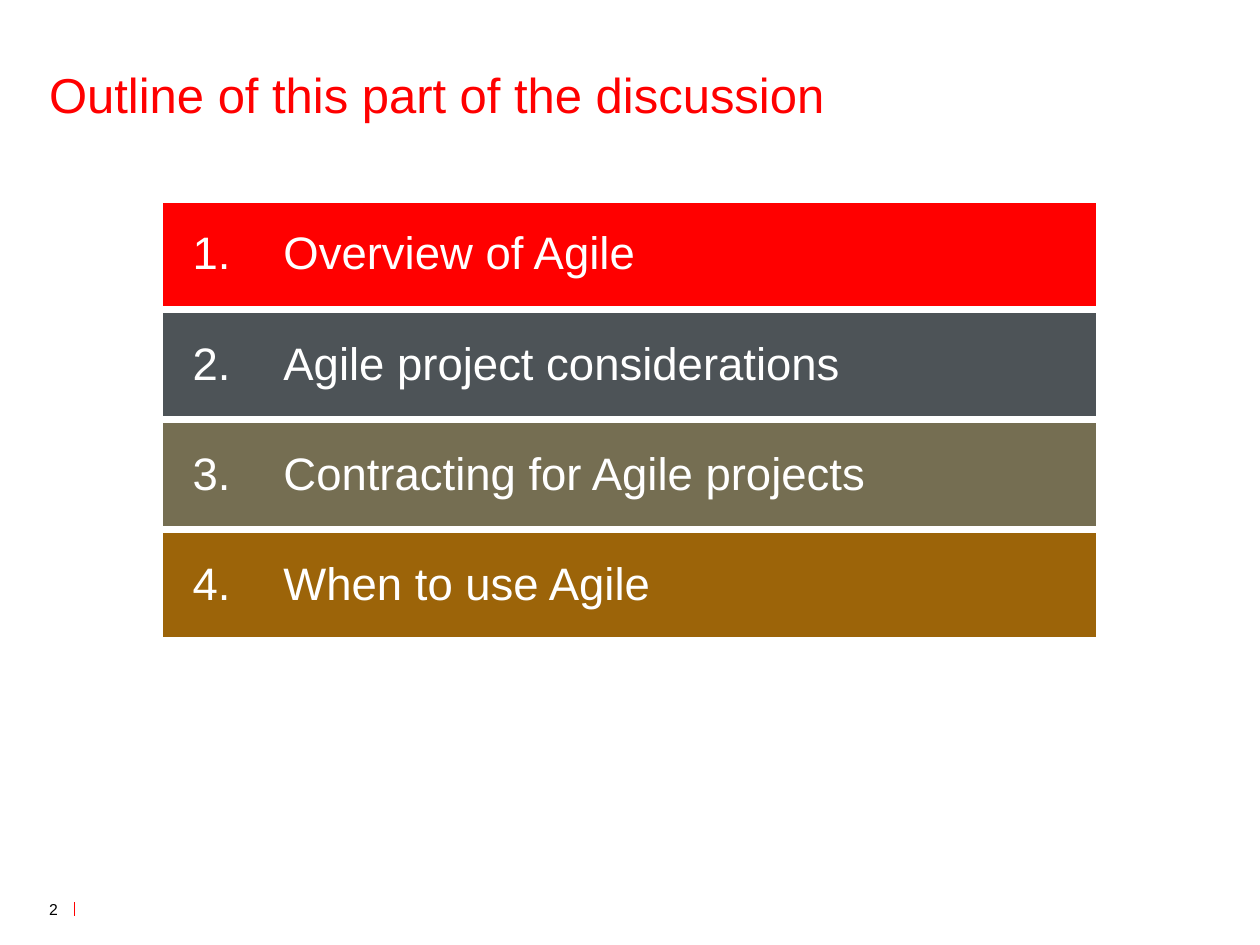
from dataclasses import dataclass

from lxml import etree
from pptx import Presentation
from pptx import util as u
from pptx.dml.color import RGBColor
from pptx.enum import shapes, text
from pptx.oxml.ns import qn


@dataclass(frozen=True)
class Theme:
    """Colours, font and type sizes of the slide."""
    font: str = "Arial"
    accent: str = "FF0000"
    ink: str = "000000"
    paper: str = "FFFFFF"
    title_size: float = 28
    agenda_size: float = 26
    number_size: float = 9
    border_width: float = 4.5
    rule_width: float = 0.5


THEME = Theme()
AGENDA = [
    ("Overview of Agile", "FF0000"),
    ("Agile project considerations", "4D5357"),
    ("Contracting for Agile projects", "756E52"),
    ("When to use Agile", "9C6409"),
]


def style_paragraph(paragraph, size, color):
    """Format every run of a paragraph."""
    for run in paragraph.runs:
        run.font.name = THEME.font
        run.font.size = u.Pt(size)
        run.font.color.rgb = RGBColor.from_string(color)


def add_label(slide, box, wording, size, color, anchor):
    """Place one line of text without insets."""
    frame = slide.shapes.add_textbox(*box).text_frame
    frame.margin_left = frame.margin_top = frame.margin_right = frame.margin_bottom = 0
    frame.word_wrap = True
    frame.vertical_anchor = anchor
    frame.text = wording
    style_paragraph(frame.paragraphs[0], size, color)


def set_borders(cell, visible_sides):
    """Draw the visible sides of a cell and clear the others."""
    properties = cell._tc.get_or_add_tcPr()
    for side in "LRTB":
        line = etree.SubElement(properties, qn(f"a:ln{side}"))
        if side in visible_sides:
            line.set("w", str(u.Pt(THEME.border_width)))
            fill = etree.SubElement(line, qn("a:solidFill"))
            etree.SubElement(fill, qn("a:srgbClr"), val=THEME.paper)
        else:
            etree.SubElement(line, qn("a:noFill"))


def fill_cell(cell, wording, color, alignment, visible_sides):
    """Set the wording, borders and fill of an agenda cell."""
    set_borders(cell, visible_sides)
    cell.fill.solid()
    cell.fill.fore_color.rgb = RGBColor.from_string(color)
    cell.margin_left = cell.margin_right = u.Inches(0.16)
    cell.margin_top = cell.margin_bottom = u.Inches(0.22)
    cell.vertical_anchor = text.MSO_ANCHOR.MIDDLE
    cell.text = wording
    paragraph = cell.text_frame.paragraphs[0]
    paragraph.alignment = alignment
    style_paragraph(paragraph, THEME.agenda_size, THEME.paper)


def add_agenda(slide, box):
    """Build the numbered agenda table inside a box."""
    left, top, width, height = box
    table = slide.shapes.add_table(len(AGENDA), 2, left, top, width, height).table
    table.first_row = table.horz_banding = False
    number_width = u.Inches(0.82)
    table.columns[0].width = number_width
    table.columns[1].width = width - number_width
    for index, (topic, color) in enumerate(AGENDA):
        fill_cell(table.cell(index, 0), f"{index + 1}.", color, text.PP_ALIGN.CENTER, "LTB")
        fill_cell(table.cell(index, 1), topic, color, text.PP_ALIGN.LEFT, "RTB")


def add_footer(slide, box):
    """Place the page number and the short rule at its right."""
    left, top, width, height = box
    add_label(slide, box, "2", THEME.number_size, THEME.ink, text.MSO_ANCHOR.TOP)
    x = left + width
    rule = slide.shapes.add_connector(
        shapes.MSO_CONNECTOR.STRAIGHT, x, top + u.Inches(0.02), x, top + u.Inches(0.13))
    rule.line.color.rgb = RGBColor.from_string(THEME.accent)
    rule.line.width = u.Pt(THEME.rule_width)
    etree.SubElement(rule._element.spPr, qn("a:effectLst"))


def inches(*lengths):
    """Convert a row of lengths from inches."""
    return tuple(u.Inches(length) for length in lengths)


def main():
    """Build and save the outline slide."""
    presentation = Presentation()
    presentation.slide_width, presentation.slide_height = inches(10, 7.5)
    slide = presentation.slides.add_slide(presentation.slide_layouts[6])
    add_label(slide, inches(0.39, 0.47, 9.21, 0.55), "Outline of this part of the discussion",
              THEME.title_size, THEME.accent, text.MSO_ANCHOR.MIDDLE)
    add_agenda(slide, inches(1.27, 1.58, 7.46, 3.5))
    add_footer(slide, inches(0.39, 7.14, 0.2, 0.2))
    presentation.save("out.pptx")


if __name__ == "__main__":
    main()
